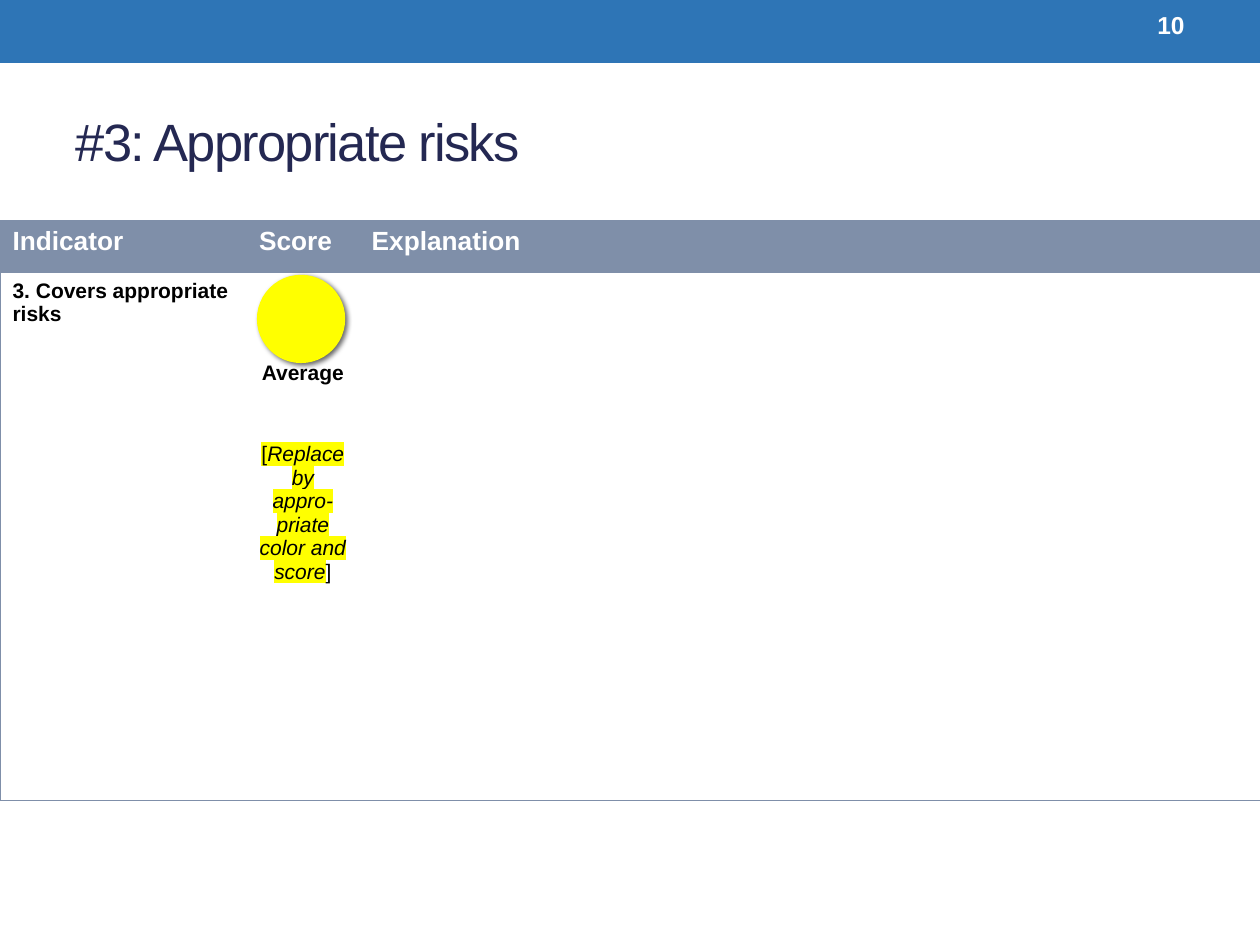
import pptx
import pptx.dml.color
import pptx.enum.shapes
import pptx.enum.text
import pptx.oxml
import pptx.oxml.ns
import pptx.util
import lxml.etree

Cm = pptx.util.Cm
Pt = pptx.util.Pt
ALIGN = pptx.enum.text.PP_ALIGN
ANCHOR = pptx.enum.text.MSO_ANCHOR
SHAPE = pptx.enum.shapes.MSO_SHAPE
FONT = "Arial"
NO_STYLE = "{2D5ABB26-0587-4C30-8999-92F81FD0307C}"
COLOURS = {
    "banner": "2E75B6",
    "title": "242852",
    "grid": "7F8FA9",
    "light": "FFFFFF",
    "dark": "000000",
    "score": "FFFF00",
}


def rgb(name):
    """Return the named colour."""
    return pptx.dml.color.RGBColor.from_string(COLOURS[name])


def add_element(parent, tag, **attributes):
    """Append a DrawingML element and return it."""
    element = lxml.etree.SubElement(parent, pptx.oxml.ns.qn(tag))
    for key, value in attributes.items():
        element.set(key, str(value))
    return element


def add_span(para, text, size=12, colour="dark", bold=False, italic=False,
             spacing=0, highlight=None):
    """Add formatted text to a paragraph."""
    span = para.add_run()
    span.text = text
    span.font.size = Pt(size)
    span.font.bold = bold
    span.font.italic = italic
    span.font.color.rgb = rgb(colour)
    properties = span.font._element
    if highlight:
        marker = add_element(properties, "a:highlight")
        add_element(marker, "a:srgbClr", val=COLOURS[highlight])
    if spacing:
        properties.set("spc", str(int(spacing * 100)))
    span.font.name = FONT


def add_banner(page, left, top, width, height):
    """Draw the top band with the page number near its right end."""
    band = page.shapes.add_shape(SHAPE.RECTANGLE, left, top, width, height)
    band.shadow.inherit = False
    band.fill.solid()
    band.fill.fore_color.rgb = rgb("banner")
    band.line.fill.background()
    box = page.shapes.add_textbox(left + width - Cm(4.24), top + Cm(0.05), Cm(2.97), Cm(0.91))
    box.text_frame.word_wrap = True
    box.text_frame.vertical_anchor = ANCHOR.MIDDLE
    para = box.text_frame.paragraphs[0]
    para.alignment = ALIGN.RIGHT
    add_span(para, "10", size=14, colour="light", bold=True)


def place_title(page, left, top, width, height):
    """Move and format the title placeholder."""
    title = page.shapes.title
    title.left, title.top, title.width, title.height = left, top, width, height
    frame = title.text_frame
    frame.auto_size = pptx.enum.text.MSO_AUTO_SIZE.NONE
    frame.vertical_anchor = ANCHOR.MIDDLE
    para = frame.paragraphs[0]
    para.alignment = ALIGN.LEFT
    add_span(para, "#3: Appropriate risks", size=30, colour="title", spacing=-1)


def format_cell(cell, sides, fill=None):
    """Give a cell its borders and fill."""
    properties = cell._tc.get_or_add_tcPr()
    for side in sides:
        line = add_element(properties, f"a:ln{side}", w=Pt(0.75))
        add_element(add_element(line, "a:solidFill"), "a:srgbClr", val=COLOURS["grid"])
    if fill:
        cell.fill.solid()
        cell.fill.fore_color.rgb = rgb(fill)
    else:
        cell.fill.background()


def fill_score(cell):
    """Write the score and its hint below the room kept for the marker."""
    cell.margin_top = Cm(1.78)
    score = cell.text_frame.paragraphs[0]
    hint = cell.text_frame.add_paragraph()
    score.alignment = hint.alignment = ALIGN.CENTER
    score.space_after = Pt(33)
    add_span(score, "Average", bold=True)
    add_span(hint, "[", highlight="score")
    add_span(hint, "Replace by appro-priate color and score", italic=True, highlight="score")
    add_span(hint, "]")


def add_score_marker(page, left, top, size):
    """Draw the shadowed score circle."""
    marker = page.shapes.add_shape(SHAPE.OVAL, left, top, size, size)
    marker.shadow.inherit = False
    marker.fill.solid()
    marker.fill.fore_color.rgb = rgb("score")
    marker.line.fill.background()
    effects = marker._element.spPr.find(pptx.oxml.ns.qn("a:effectLst"))
    shadow = add_element(effects, "a:outerShdw", blurRad=Pt(3), dist=Pt(2),
                         dir=45 * 60000, algn="tl", rotWithShape=0)
    colour = add_element(shadow, "a:srgbClr", val=COLOURS["dark"])
    add_element(colour, "a:alpha", val=60000)


def add_indicator_table(page, left, top, width, height):
    """Build the indicator table with its score marker."""
    header_height = Cm(1.05)
    widths = [Cm(4.97), Cm(2.27)]
    widths.append(width - sum(widths))
    frame = page.shapes.add_table(2, 3, left, top, width, height)
    table = frame.table
    table.horz_banding = False
    table._tbl.tblPr.find(pptx.oxml.ns.qn("a:tableStyleId")).text = NO_STYLE
    table.rows[0].height = header_height
    table.rows[1].height = height - header_height
    headings = ["Indicator", "Score", "Explanation"]
    for index, (heading, column_width) in enumerate(zip(headings, widths)):
        table.columns[index].width = column_width
        outer = {0: ["L"], 2: ["R"]}.get(index, [])
        header, body = table.cell(0, index), table.cell(1, index)
        format_cell(header, outer + ["T"], fill="grid")
        format_cell(body, outer + ["T", "B"])
        add_span(header.text_frame.paragraphs[0], heading, size=15, colour="light", bold=True)
    add_span(table.cell(1, 0).text_frame.paragraphs[0], "3. Covers appropriate risks", bold=True)
    fill_score(table.cell(1, 1))
    add_score_marker(page, left + Cm(5.18), top + Cm(1.09), Cm(1.78))


def main():
    """Build and save the deck."""
    deck = pptx.Presentation()
    deck.slide_width, deck.slide_height = Cm(25.4), Cm(19.05)
    page = deck.slides.add_slide(deck.slide_layouts.get_by_name("Title Only"))
    add_banner(page, Cm(0), Cm(0), deck.slide_width, Cm(1.27))
    place_title(page, Cm(1.27), Cm(1.47), Cm(22.86), Cm(2.74))
    add_indicator_table(page, Cm(0), Cm(4.45), Cm(25.45), Cm(11.68))
    deck.save("out.pptx")


if __name__ == "__main__":
    main()
